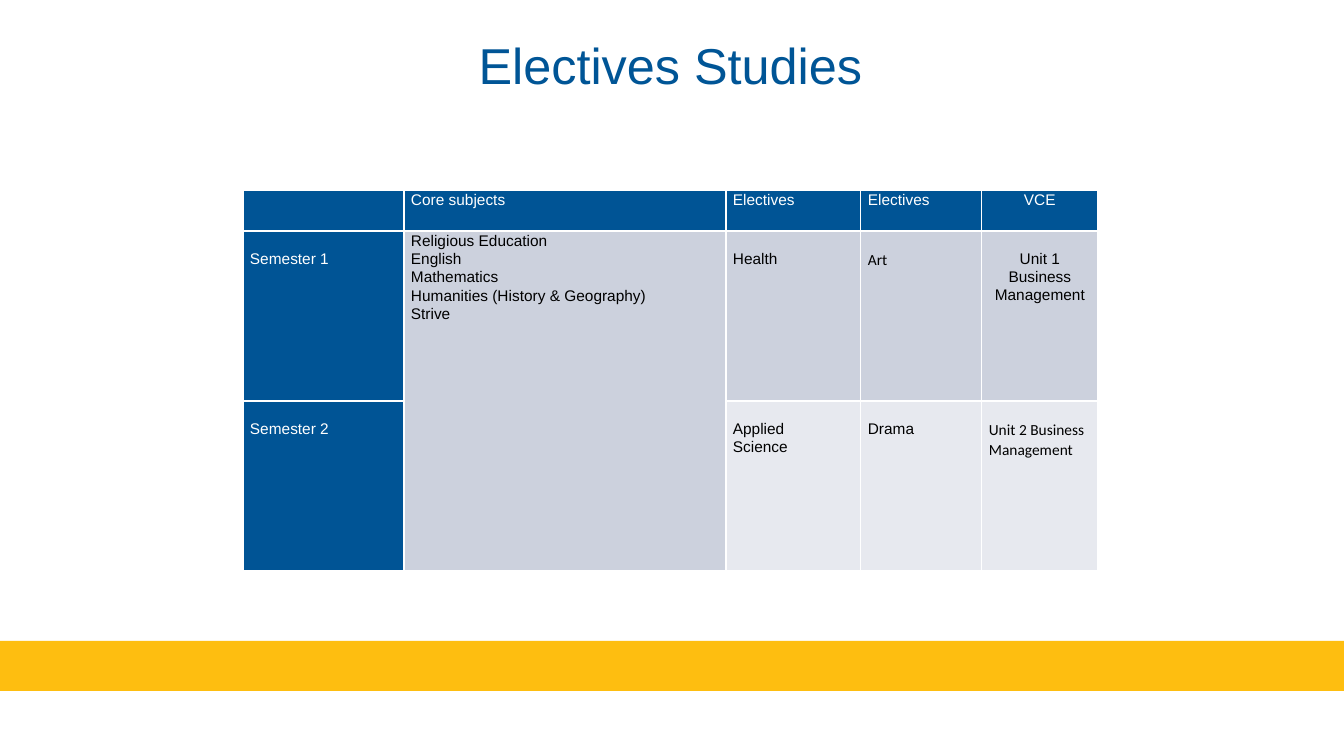
import pptx
import pptx.util
import pptx.dml.color
import pptx.enum.shapes
import pptx.enum.text
import lxml.etree
import pptx.oxml.ns

RGBColor = pptx.dml.color.RGBColor
TITLE_BLUE = RGBColor(0x00, 0x55, 0x96)
CELL_BLUE = RGBColor(0x00, 0x54, 0x95)
GOLD = RGBColor(0xFE, 0xBE, 0x10)
GREY = RGBColor(0xCC, 0xD1, 0xDD)
LIGHT = RGBColor(0xE7, 0xE9, 0xEF)
WHITE = RGBColor(0xFF, 0xFF, 0xFF)
BLACK = RGBColor(0x00, 0x00, 0x00)
ALIGN = pptx.enum.text.PP_ALIGN


def px(length):
    return pptx.util.Emu(round(length * 914400 / 100.8))


def add_borders(cell):
    properties = cell._tc.get_or_add_tcPr()
    for index, side in enumerate(("lnL", "lnR", "lnT", "lnB")):
        line = lxml.etree.Element(pptx.oxml.ns.qn("a:" + side), w="12700")
        fill = lxml.etree.SubElement(line, pptx.oxml.ns.qn("a:solidFill"))
        lxml.etree.SubElement(fill, pptx.oxml.ns.qn("a:srgbClr"), val=str(WHITE))
        properties.insert(index, line)


deck = pptx.Presentation()
deck.slide_width = px(1344)
deck.slide_height = px(756)
page = deck.slides.add_slide(deck.slide_layouts[5])

band = page.shapes.add_shape(
    pptx.enum.shapes.MSO_SHAPE.RECTANGLE, 0, px(641), px(1344), px(50))
band.shadow.inherit = False
band.fill.solid()
band.fill.fore_color.rgb = GOLD
band.line.fill.background()

title = page.shapes.title
title.left, title.top, title.width, title.height = px(337), px(29), px(667), px(72)
title.text_frame.text = "Electives Studies"
title.text_frame.vertical_anchor = pptx.enum.text.MSO_ANCHOR.TOP
heading = title.text_frame.paragraphs[0]
heading.alignment = ALIGN.CENTER
heading.font.size = pptx.util.Pt(36)
heading.font.name = "Arial"
heading.font.color.rgb = TITLE_BLUE

ROWS = [
    ["", "Core subjects", "Electives", "Electives", "VCE"],
    ["Semester 1",
     "Religious Education\nEnglish\nMathematics\nHumanities (History & Geography)\nStrive",
     "Health", "Art", "Unit 1 Business Management"],
    ["Semester 2", "", "Applied\nScience", "Drama", "Unit 2 Business Management"],
]
WIDTHS = [161, 322, 135, 121, 116]
HEIGHTS = [41, 170, 170]
BODY_FILLS = [CELL_BLUE, GREY, LIGHT]
CALIBRI_CELLS = [(1, 3), (2, 4)]
CENTERED_CELLS = [(0, 4), (1, 4)]

table = page.shapes.add_table(
    len(HEIGHTS), len(WIDTHS), px(243), px(190), px(sum(WIDTHS)), px(sum(HEIGHTS))).table
table.first_row = False
table.horz_banding = False
for column, width in zip(table.columns, WIDTHS):
    column.width = px(width)
for row, height in zip(table.rows, HEIGHTS):
    row.height = px(height)
table.cell(1, 1).merge(table.cell(2, 1))

for r, texts in enumerate(ROWS):
    for c, text in enumerate(texts):
        cell = table.cell(r, c)
        blue = r == 0 or c == 0
        cell.margin_left = cell.margin_right = px(7)
        cell.margin_top = px(0 if r == 0 or c == 1 else 18)
        cell.margin_bottom = 0
        cell.fill.solid()
        cell.fill.fore_color.rgb = CELL_BLUE if blue else GREY if c == 1 else BODY_FILLS[r]
        add_borders(cell)
        if not text:
            continue
        cell.text = text
        for para in cell.text_frame.paragraphs:
            para.line_spacing = 1.07
            para.alignment = ALIGN.CENTER if (r, c) in CENTERED_CELLS else ALIGN.LEFT
            para.font.size = pptx.util.Pt(11)
            para.font.name = "Calibri" if (r, c) in CALIBRI_CELLS else "Arial"
            para.font.color.rgb = WHITE if blue else BLACK

deck.save("out.pptx")
